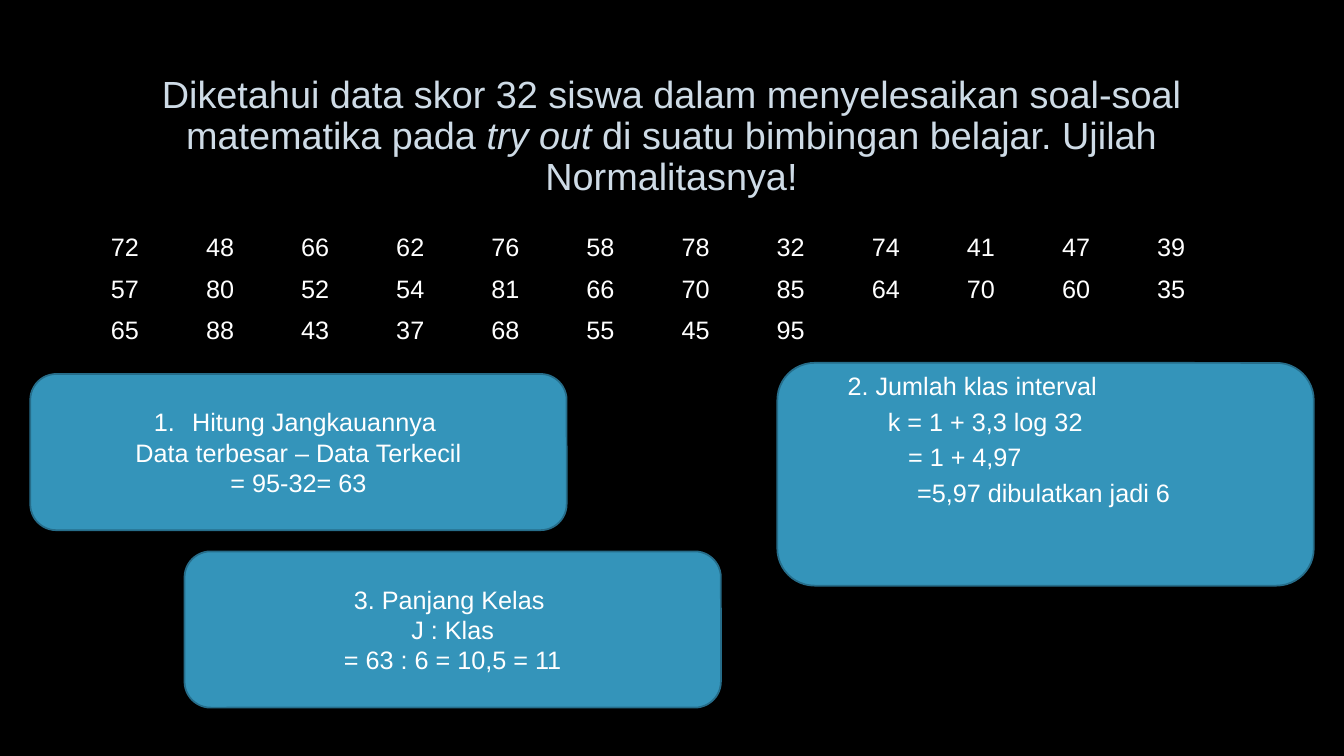
import pptx
import pptx.dml.color
import pptx.enum.shapes
import pptx.enum.text
import pptx.oxml
import pptx.oxml.ns
import pptx.util
from pptx.util import Inches

ALIGN = pptx.enum.text.PP_ALIGN
ANCHOR = pptx.enum.text.MSO_ANCHOR
NS = pptx.oxml.ns.nsdecls("a")
NO_GRID_STYLE = "{2D5ABB26-0587-4C30-8999-92F81FD0307C}"


class Deck:
    """Style and current slide, with one method per kind of element."""

    font = "Arial"
    size = 18
    colors = {"back": "000000", "title": "CEDBE6", "text": "FFFFFF",
              "box": "3494BA", "edge": "266D8A", "outline": "404040"}

    def __init__(self):
        self.prs = pptx.Presentation()
        self.prs.slide_width = Inches(13.33)
        self.prs.slide_height = Inches(7.5)
        self.s = self.prs.slides.add_slide(self.prs.slide_layouts[5])
        self.paint(self.s.background.fill, "back")

    def rgb(self, name):
        return pptx.dml.color.RGBColor.from_string(self.colors[name])

    def paint(self, fill, name):
        fill.solid()
        fill.fore_color.rgb = self.rgb(name)

    def style(self, p, size=None, color="text"):
        for r in p.runs:
            r.font.name = self.font
            r.font.size = pptx.util.Pt(size or self.size)
            r.font.color.rgb = self.rgb(color)

    def title(self, parts, left, top, width, height, size):
        sp = self.s.shapes.title
        sp.left, sp.top = Inches(left), Inches(top)
        sp.width, sp.height = Inches(width), Inches(height)
        tf = sp.text_frame
        tf.word_wrap = True
        tf.auto_size = pptx.enum.text.MSO_AUTO_SIZE.NONE
        tf.vertical_anchor = ANCHOR.MIDDLE
        p = tf.paragraphs[0]
        p.alignment = ALIGN.CENTER
        p.line_spacing = 0.9
        for text, italic in parts:
            r = p.add_run()
            r.text = text
            r.font.italic = italic
        self.style(p, size, "title")
        # Faint outline around the letters
        for r in p.runs:
            r.font._element.insert(0, pptx.oxml.parse_xml(
                f'<a:ln {NS} w="9525"><a:solidFill>'
                f'<a:srgbClr val="{self.colors["outline"]}"><a:alpha val="10000"/>'
                '</a:srgbClr></a:solidFill></a:ln>'))

    def table(self, rows, left, top, width, row_height):
        n_cols = max(len(row) for row in rows)
        frame = self.s.shapes.add_table(
            len(rows), n_cols, Inches(left), Inches(top),
            Inches(width), Inches(row_height * len(rows)))
        table = frame.table
        table.first_row = table.horz_banding = False
        style_id = table._tbl.tblPr.find(pptx.oxml.ns.qn("a:tableStyleId"))
        style_id.text = NO_GRID_STYLE
        for cell in table.iter_cells():
            cell.fill.background()
        for i, row in enumerate(rows):
            for j, score in enumerate(row):
                tf = table.cell(i, j).text_frame
                tf.text = str(score)
                self.style(tf.paragraphs[0])

    def box(self, lines, left, top, height, width=5.32):
        sp = self.s.shapes.add_shape(
            pptx.enum.shapes.MSO_SHAPE.ROUNDED_RECTANGLE,
            Inches(left), Inches(top), Inches(width), Inches(height))
        sp.shadow.inherit = False
        self.paint(sp.fill, "box")
        sp.line.color.rgb = self.rgb("edge")
        sp.line.width = pptx.util.Pt(1.25)
        tf = sp.text_frame
        tf.word_wrap = True
        tf.vertical_anchor = ANCHOR.MIDDLE
        tf.text = "\n".join(lines)
        for p in tf.paragraphs:
            p.alignment = ALIGN.CENTER
            self.style(p)
        return tf

    def indent(self, p, left, first=0):
        pPr = p._p.get_or_add_pPr()
        pPr.set("marL", str(Inches(left)))
        pPr.set("indent", str(Inches(first)))
        return pPr

    def number(self, p):
        pPr = self.indent(p, 0.38, -0.38)
        pPr.append(pptx.oxml.parse_xml(
            f'<a:buAutoNum {NS} type="arabicPeriod"/>'))


def main():
    deck = Deck()

    # Problem statement
    deck.title([("Diketahui data skor 32 siswa dalam menyelesaikan soal-soal "
                 "matematika pada ", False),
                ("try out", True),
                (" di suatu bimbingan belajar. Ujilah Normalitasnya!", False)],
               1, 0.67, 11.32, 1.38, size=27)

    # Scores of the 32 students
    deck.table([[72, 48, 66, 62, 76, 58, 78, 32, 74, 41, 47, 39],
                [57, 80, 52, 54, 81, 66, 70, 85, 64, 70, 60, 35],
                [65, 88, 43, 37, 68, 55, 45, 95]],
               1, 2.27, 11.32, 0.41)

    # Step 1: range
    tf = deck.box(["Hitung Jangkauannya ", "Data terbesar – Data Terkecil",
                   "= 95-32= 63"], 0.3, 3.71, 1.55)
    deck.number(tf.paragraphs[0])

    # Step 2: number of classes, each line indented further
    tf = deck.box(["2. Jumlah klas interval", "k = 1 + 3,3 log 32",
                   "= 1 + 4,97", "=5,97 dibulatkan jadi 6"], 7.71, 3.6, 2.21)
    tf.vertical_anchor = ANCHOR.TOP
    tf.margin_top = 0
    for i, (p, left) in enumerate(zip(tf.paragraphs, (0.49, 0.89, 1.09, 1.18))):
        p.alignment = ALIGN.LEFT
        p.line_spacing = 0.9
        p.space_before = pptx.util.Pt(6 if i else 0)
        deck.indent(p, left)

    # Step 3: class width
    deck.box(["3. Panjang Kelas ", "J : Klas", "= 63 : 6 = 10,5 = 11"],
             1.83, 5.47, 1.55)

    deck.prs.save("out.pptx")


if __name__ == "__main__":
    main()
